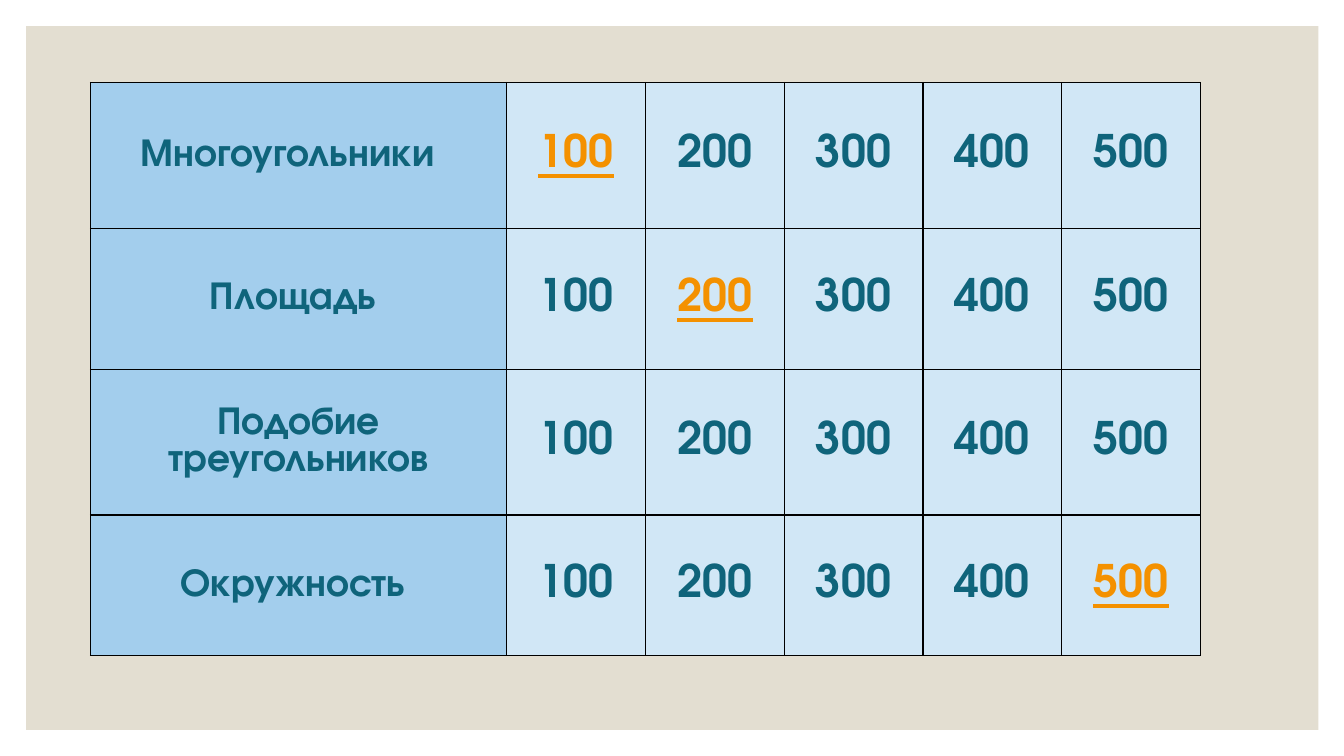
from pptx import Presentation
from pptx.dml.color import RGBColor
from pptx.enum import shapes, text
from pptx.oxml import parse_xml
from pptx.oxml.ns import nsdecls
from pptx.util import Pt

FONT = "TeX Gyre Adventor"
TEAL, ORANGE = "0F647B", "F49100"
TOPIC_FILL, POINTS_FILL = "A3CEED", "D1E7F6"
TOPICS = ["Многоугольники  ", "Площадь ", "Подобие треугольников", "Окружность "]
POINTS = ["100", "200", "300", "400", "500"]
OPENED = {(0, 1), (1, 2), (3, 5)}  # (row, column) of the questions already taken


def paint(fill, color):
    fill.solid()
    fill.fore_color.rgb = RGBColor.from_string(color)


def add_panel(s, x, y, w, h):
    sp = s.shapes.add_shape(shapes.MSO_SHAPE.RECTANGLE, Pt(x), Pt(y), Pt(w), Pt(h))
    sp.shadow.inherit = False
    paint(sp.fill, "E3DED1")
    sp.line.fill.background()


def add_borders(cell):
    tcPr = cell._tc.get_or_add_tcPr()
    for side in ("lnL", "lnR", "lnT", "lnB"):
        tcPr.append(parse_xml(
            f'<a:{side} {nsdecls("a")} w="12700"><a:solidFill>'
            f'<a:srgbClr val="000000"/></a:solidFill></a:{side}>'))


def fill_cell(cell, words, size, fill, opened):
    add_borders(cell)
    paint(cell.fill, fill)
    cell.vertical_anchor = text.MSO_ANCHOR.MIDDLE
    p = cell.text_frame.paragraphs[0]
    p.text = words
    p.alignment = text.PP_ALIGN.CENTER
    p.line_spacing = Pt(size * 0.92)
    font = p.runs[0].font
    font.name, font.size, font.bold = FONT, Pt(size), True
    font.underline = opened
    paint(font.fill, ORANGE if opened else TEAL)


def add_board(s, x, y, w, h):
    """Quiz board: one row per topic, one column per question value."""
    frame = s.shapes.add_table(len(TOPICS), len(POINTS) + 1, Pt(x), Pt(y), Pt(w), Pt(h))
    tbl = frame.table
    tbl.first_row = tbl.horz_banding = False
    topic_w = w * 3 / 8
    for c, col in enumerate(tbl.columns):
        col.width = Pt((w - topic_w) / len(POINTS) if c else topic_w)
    for r, row in enumerate(tbl.rows):
        row.height = Pt(h / len(TOPICS) + (-1.8 if r % 2 else 1.8))
        for c, words in enumerate([TOPICS[r], *POINTS]):
            size, fill = (32, POINTS_FILL) if c else (28, TOPIC_FILL)
            fill_cell(tbl.cell(r, c), words, size, fill, (r, c) in OPENED)


def main():
    prs = Presentation()
    prs.slide_width, prs.slide_height = Pt(960), Pt(540)
    s = prs.slides.add_slide(prs.slide_layouts[6])
    add_panel(s, 18.7, 18.7, 923, 502.6)
    add_board(s, 64.6, 59, 793, 409.6)
    prs.save("out.pptx")


if __name__ == "__main__":
    main()
